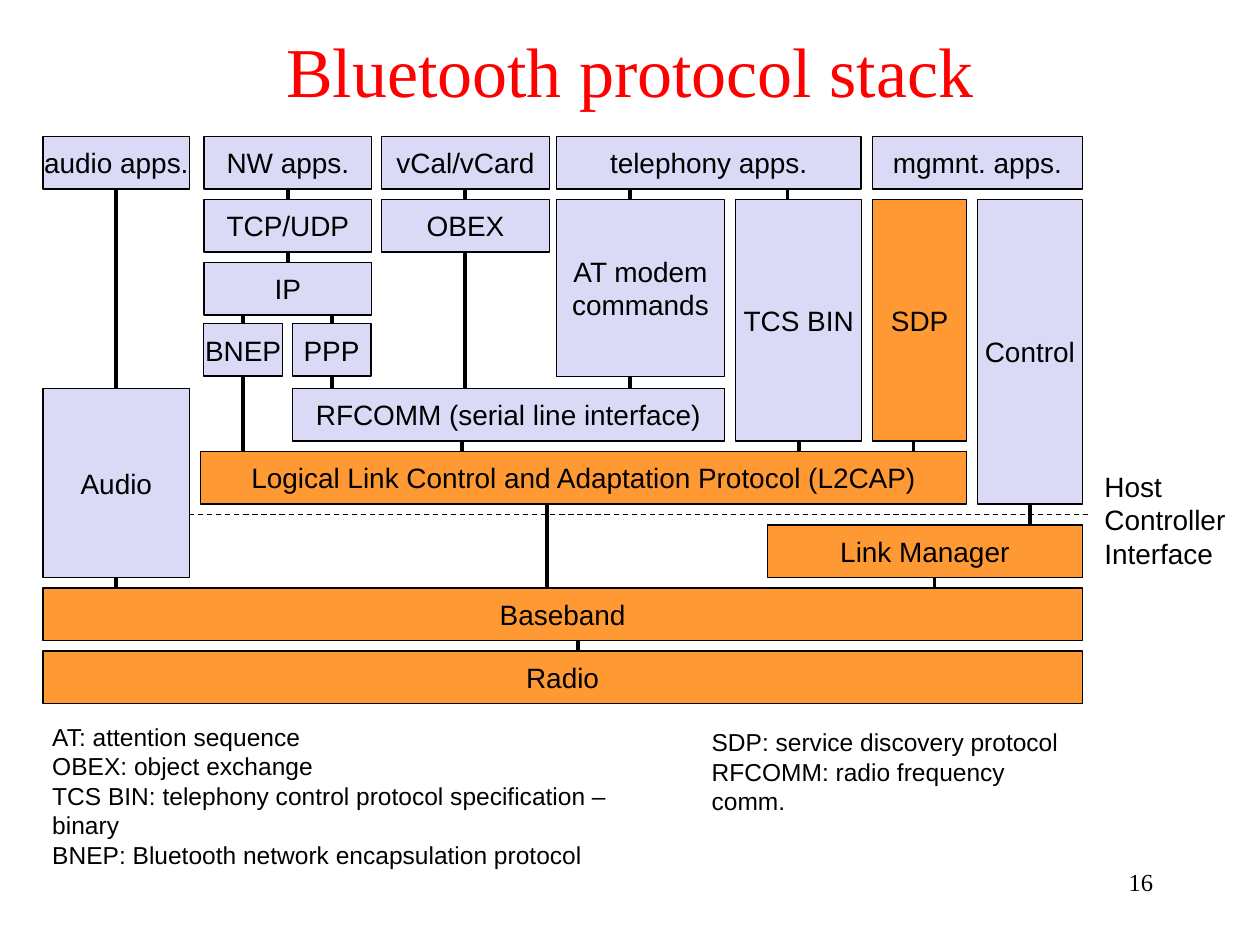
from pptx import Presentation
from pptx.dml.color import RGBColor
from pptx.enum.dml import MSO_LINE
from pptx.enum.shapes import MSO_CONNECTOR, MSO_SHAPE
from pptx.enum.text import MSO_ANCHOR, PP_ALIGN
from pptx.oxml.ns import qn
from pptx.util import Pt
from lxml import etree

BLACK = RGBColor(0x00, 0x00, 0x00)
RED = RGBColor(0xFF, 0x00, 0x00)
WHITE = RGBColor(0xFF, 0xFF, 0xFF)
ORANGE = RGBColor(0xFF, 0x99, 0x33)
LILAC = RGBColor(0xDA, 0xDA, 0xF6)
SANS, SERIF = "Arial", "Times New Roman"

# Tops of the layers, from applications down to radio
ROWS = [78, 114, 150, 185, 222, 258, 300, 336, 372]
BOX_H = 30

# Label: (left, width, first row, last row, fill)
BOXES = {
    "audio apps.": (24.5, 84, 0, 0, LILAC),
    "NW apps.": (116.5, 96, 0, 0, LILAC),
    "vCal/vCard": (218, 96, 0, 0, LILAC),
    "telephony apps.": (318, 174, 0, 0, LILAC),
    "mgmnt. apps.": (498.5, 120, 0, 0, LILAC),
    "TCP/UDP": (116.5, 96, 1, 1, LILAC),
    "OBEX": (218, 96, 1, 1, LILAC),
    "AT modem\ncommands": (318, 96, 1, 3, LILAC),
    "TCS BIN": (420.5, 72, 1, 4, LILAC),
    "SDP": (498.5, 54, 1, 4, ORANGE),
    "Control": (558.5, 60, 1, 5, LILAC),
    "IP": (116.5, 96, 2, 2, LILAC),
    "BNEP": (116.5, 45, 3, 3, LILAC),
    "PPP": (167, 45, 3, 3, LILAC),
    "RFCOMM (serial line interface)": (167, 247, 4, 4, LILAC),
    "Audio": (24.5, 84, 4, 6, LILAC),
    "Logical Link Control and Adaptation Protocol (L2CAP)": (114.5, 438, 5, 5, ORANGE),
    "Link Manager": (438.5, 180, 6, 6, ORANGE),
    "Baseband": (24.5, 594, 7, 7, ORANGE),
    "Radio": (24.5, 594, 8, 8, ORANGE),
}
AT = "AT modem\ncommands"
RFCOMM = "RFCOMM (serial line interface)"
L2CAP = "Logical Link Control and Adaptation Protocol (L2CAP)"

# Upper box, lower box, x of the link (None: middle of the upper box)
LINKS = [
    ("audio apps.", "Audio", None),
    ("NW apps.", "TCP/UDP", None),
    ("TCP/UDP", "IP", None),
    ("IP", "BNEP", 139),
    ("IP", "PPP", 189.5),
    ("BNEP", L2CAP, None),
    ("PPP", RFCOMM, None),
    ("vCal/vCard", "OBEX", None),
    ("OBEX", RFCOMM, None),
    ("telephony apps.", AT, 360),
    ("telephony apps.", "TCS BIN", 450),
    (AT, RFCOMM, 360),
    (RFCOMM, L2CAP, 264),
    ("TCS BIN", L2CAP, None),
    ("SDP", L2CAP, 522),
    (L2CAP, "Baseband", 312.5),
    ("Control", "Link Manager", None),
    ("Audio", "Baseband", None),
    ("Link Manager", "Baseband", 534),
    ("Baseband", "Radio", 330.5),
]

# Text, (left, top, width, height), size, font, colour, alignment, anchor
TEXTS = [
    ("Bluetooth protocol stack", (0, 15, 720, 49), 40, SERIF, RED,
     PP_ALIGN.CENTER, MSO_ANCHOR.MIDDLE),
    ("Host\nController\nInterface", (624, 264.5, 84, 65), 16, SANS, BLACK,
     PP_ALIGN.LEFT, MSO_ANCHOR.TOP),
    ("AT: attention sequence\nOBEX: object exchange\n"
     "TCS BIN: telephony control protocol specification – binary\n"
     "BNEP: Bluetooth network encapsulation protocol",
     (22.8, 409, 371.5, 74), 14, SANS, BLACK, PP_ALIGN.LEFT, MSO_ANCHOR.TOP),
    ("SDP: service discovery protocol\nRFCOMM: radio frequency comm.",
     (399.6, 412, 227, 41), 14, SANS, BLACK, PP_ALIGN.LEFT, MSO_ANCHOR.TOP),
    ("16", (516, 492, 150, 36), 14, SERIF, BLACK, PP_ALIGN.RIGHT, MSO_ANCHOR.TOP),
]


def write(tf, text, size, font, color, align, anchor):
    tf.vertical_anchor = anchor
    for i, line in enumerate(text.split("\n")):
        p = tf.add_paragraph() if i else tf.paragraphs[0]
        p.text = line
        p.alignment = align
        p.font.size, p.font.name = Pt(size), font
        p.font.color.rgb = color


def add_line(x1, y1, x2, y2, width):
    c = s.shapes.add_connector(MSO_CONNECTOR.STRAIGHT, Pt(x1), Pt(y1), Pt(x2), Pt(y2))
    c.line.color.rgb = BLACK
    c.line.width = Pt(width)
    etree.SubElement(c._element.spPr, qn("a:effectLst"))
    return c


def add_box(label, left, width, first, last, fill):
    top = ROWS[first]
    sp = s.shapes.add_shape(MSO_SHAPE.RECTANGLE, Pt(left), Pt(top), Pt(width),
                            Pt(ROWS[last] + BOX_H - top))
    sp.shadow.inherit = False
    sp.fill.solid()
    sp.fill.fore_color.rgb = fill
    sp.line.color.rgb = BLACK
    sp.line.width = Pt(0.75)
    sp.text_frame.word_wrap = False
    write(sp.text_frame, label, 16, SANS, BLACK, PP_ALIGN.CENTER, MSO_ANCHOR.MIDDLE)
    return sp


def middle(label):
    left, width = BOXES[label][:2]
    return left + width / 2


prs = Presentation()
prs.slide_width, prs.slide_height = Pt(720), Pt(540)
s = prs.slides.add_slide(prs.slide_layouts[6])
s.background.fill.solid()
s.background.fill.fore_color.rgb = WHITE

# Host controller interface, running behind the boxes
add_line(72, 294, 624, 294, 0.75).line.dash_style = MSO_LINE.DASH

# Protocol boxes
shapes = {label: add_box(label, *box) for label, box in BOXES.items()}

# Links, joined to a box wherever they meet the middle of its side
for upper, lower, x in LINKS:
    x = middle(upper) if x is None else x
    c = add_line(x, ROWS[BOXES[upper][3]] + BOX_H, x, ROWS[BOXES[lower][2]], 2.25)
    if x == middle(upper):
        c.begin_connect(shapes[upper], 2)
    if x == middle(lower):
        c.end_connect(shapes[lower], 0)

# Title, side label, abbreviations and page number
for text, place, *style in TEXTS:
    tf = s.shapes.add_textbox(*map(Pt, place)).text_frame
    tf.word_wrap = True
    write(tf, text, *style)

prs.save("out.pptx")
